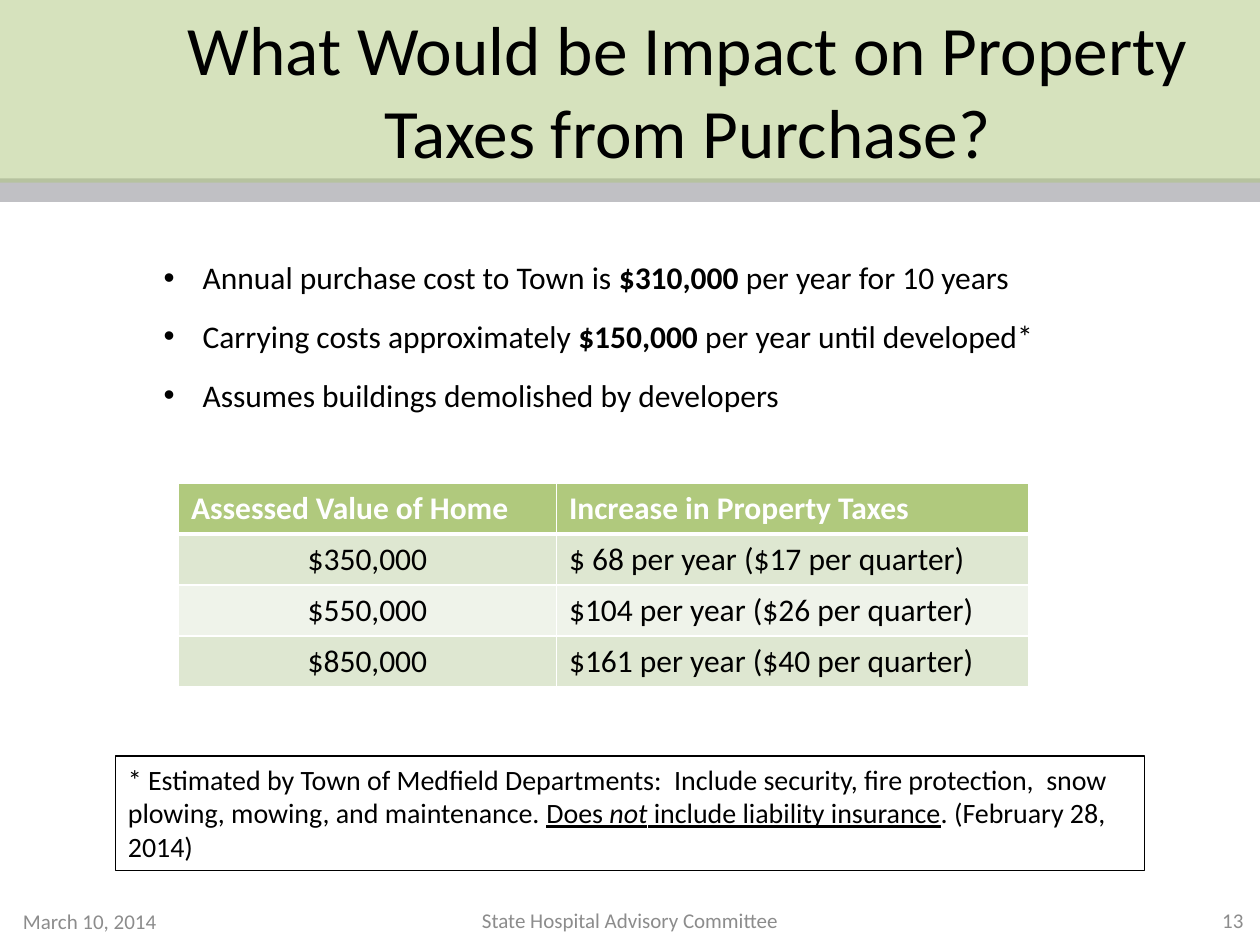
import pptx
import pptx.dml.color
import pptx.enum.shapes
import pptx.enum.text
import pptx.oxml
import pptx.oxml.ns
import pptx.util
from lxml import etree

COLORS = {
    "black": "000000", "white": "FFFFFF", "gray": "8C8C8C",
    "bar": "82838A", "band": "ADC579", "header": "9BBB59",
    "odd": "DEE7D1", "even": "EFF3EA",
}
LEFT = pptx.enum.text.PP_ALIGN.LEFT
CENTER = pptx.enum.text.PP_ALIGN.CENTER
RIGHT = pptx.enum.text.PP_ALIGN.RIGHT
TOP = pptx.enum.text.MSO_ANCHOR.TOP
MIDDLE = pptx.enum.text.MSO_ANCHOR.MIDDLE


class Deck:
    font = "Calibri"
    columns, rows = 120, 90

    def __init__(self):
        self.prs = pptx.Presentation()
        self.prs.slide_width = pptx.util.Inches(10)
        self.prs.slide_height = pptx.util.Inches(7.5)
        self.s = self.prs.slides.add_slide(self.prs.slide_layouts[6])

    def x(self, n):
        return round(self.prs.slide_width * n / self.columns)

    def y(self, n):
        return round(self.prs.slide_height * n / self.rows)

    def box(self, left, top, width, height):
        return self.x(left), self.y(top), self.x(width), self.y(height)

    def color(self, name):
        return pptx.dml.color.RGBColor.from_string(COLORS[name])

    def sub(self, parent, tag, **attrs):
        return etree.SubElement(parent, pptx.oxml.ns.qn(tag), attrs)

    def paint(self, fill, name):
        fill.solid()
        fill.fore_color.rgb = self.color(name)

    def fade(self, element, share):
        clr = element.find(pptx.oxml.ns.qn("a:solidFill"))[0]
        self.sub(clr, "a:alpha", val=str(share * 1000))

    def paragraph(self, p, runs, size, color="black", align=LEFT, bold=None, bullet=False):
        p.alignment = align
        if bullet:
            p.space_after = pptx.util.Pt(12)
            pPr = p._p.get_or_add_pPr()
            indent = pptx.util.Inches(0.31)
            pPr.set("marL", str(indent))
            pPr.set("indent", str(-indent))
            self.sub(pPr, "a:buFont", typeface="Arial")
            self.sub(pPr, "a:buChar", char="•")
        p.font.name = self.font
        p.font.size = pptx.util.Pt(size)
        p.font.color.rgb = self.color(color)
        p.font.bold = bold
        for text, marks in runs:
            r = p.add_run()
            r.text = text
            if "b" in marks:
                r.font.bold = True
            if "i" in marks:
                r.font.italic = True
            if "u" in marks:
                r.font.underline = True

    def text(self, place, paragraphs, size, anchor=TOP, outline=None, **style):
        sp = self.s.shapes.add_textbox(*self.box(*place))
        if outline:
            sp.line.color.rgb = self.color(outline)
            sp.line.width = pptx.util.Pt(0.75)
        tf = sp.text_frame
        tf.word_wrap = True
        tf.vertical_anchor = anchor
        for i, runs in enumerate(paragraphs):
            p = tf.add_paragraph() if i else tf.paragraphs[0]
            self.paragraph(p, runs, size, **style)

    def band(self, place, color, opacity):
        sp = self.s.shapes.add_shape(pptx.enum.shapes.MSO_SHAPE.RECTANGLE, *self.box(*place))
        sp.shadow.inherit = False
        self.paint(sp.fill, color)
        self.fade(sp._element.spPr, opacity)
        sp.line.fill.background()

    def borders(self, tcPr, widths):
        for side, width in widths.items():
            ln = self.sub(tcPr, f"a:ln{side}", w=str(pptx.util.Pt(width)))
            self.sub(self.sub(ln, "a:solidFill"), "a:srgbClr", val=COLORS["white"])

    def table(self, place, widths, data, size):
        frame = self.s.shapes.add_table(len(data), len(widths), *self.box(*place))
        table = frame.table
        for column, width in zip(table.columns, widths):
            column.width = self.x(width)
        for i, row in enumerate(data):
            for j, text in enumerate(row):
                cell = table.cell(i, j)
                head = i == 0
                tcPr = cell._tc.get_or_add_tcPr()
                self.borders(tcPr, {"L": 1, "R": 1, "T": 3 if i == 1 else 1, "B": 3 if head else 1})
                self.paint(cell.fill, "header" if head else "odd" if i % 2 else "even")
                if head:
                    self.fade(tcPr, 78)
                self.paragraph(cell.text_frame.paragraphs[0], [(text, "")], size,
                               color="white" if head else "black", bold=head,
                               align=LEFT if head or j else CENTER)


def main():
    deck = Deck()
    deck.band((-1, 17, 122, 2.25), "bar", 50)
    deck.band((-1, -2, 122, 19.4), "band", 49)
    deck.text((15, 1, 101, 15), [[("What Would be Impact on Property Taxes from Purchase?", "")]],
              39.6, anchor=MIDDLE, align=CENTER)
    deck.text((14.4, 24, 87, 16.2), [
        [("Annual purchase cost to Town is ", ""), ("$310,000 ", "b"), ("per year for 10 years", "")],
        [("Carrying costs approximately ", ""), ("$150,000", "b"), (" per year until developed*", "")],
        [("Assumes buildings demolished by developers", "")],
    ], 18, bullet=True)
    deck.text((11, 72, 98, 10.9), [[
        ("* Estimated by Town of Medfield Departments:  Include security, fire protection,  "
         "snow plowing, mowing, and maintenance. ", ""),
        ("Does ", "u"), ("not", "ui"),
        (" include liability insurance", "u"), (". (February 28, 2014)", ""),
    ]], 16, outline="black")
    for place, text, align in [
        ((1, 85.3, 16.2, 4.8), "March 10, 2014", LEFT),
        ((41, 85.2, 38, 4.8), "State Hospital Advisory Committee", CENTER),
        ((113, 85.2, 6.6, 4.8), "13", RIGHT),
    ]:
        deck.text(place, [[(text, "")]], 12, anchor=MIDDLE, color="gray", align=align)
    deck.table((17, 46, 81, 19.45), (36, 45), [
        ("Assessed Value of Home", "Increase in Property Taxes"),
        ("$350,000", "$ 68 per year ($17 per quarter)"),
        ("$550,000", "$104 per year ($26 per quarter)"),
        ("$850,000", "$161 per year ($40 per quarter)"),
    ], 18)
    deck.prs.save("out.pptx")


if __name__ == "__main__":
    main()
